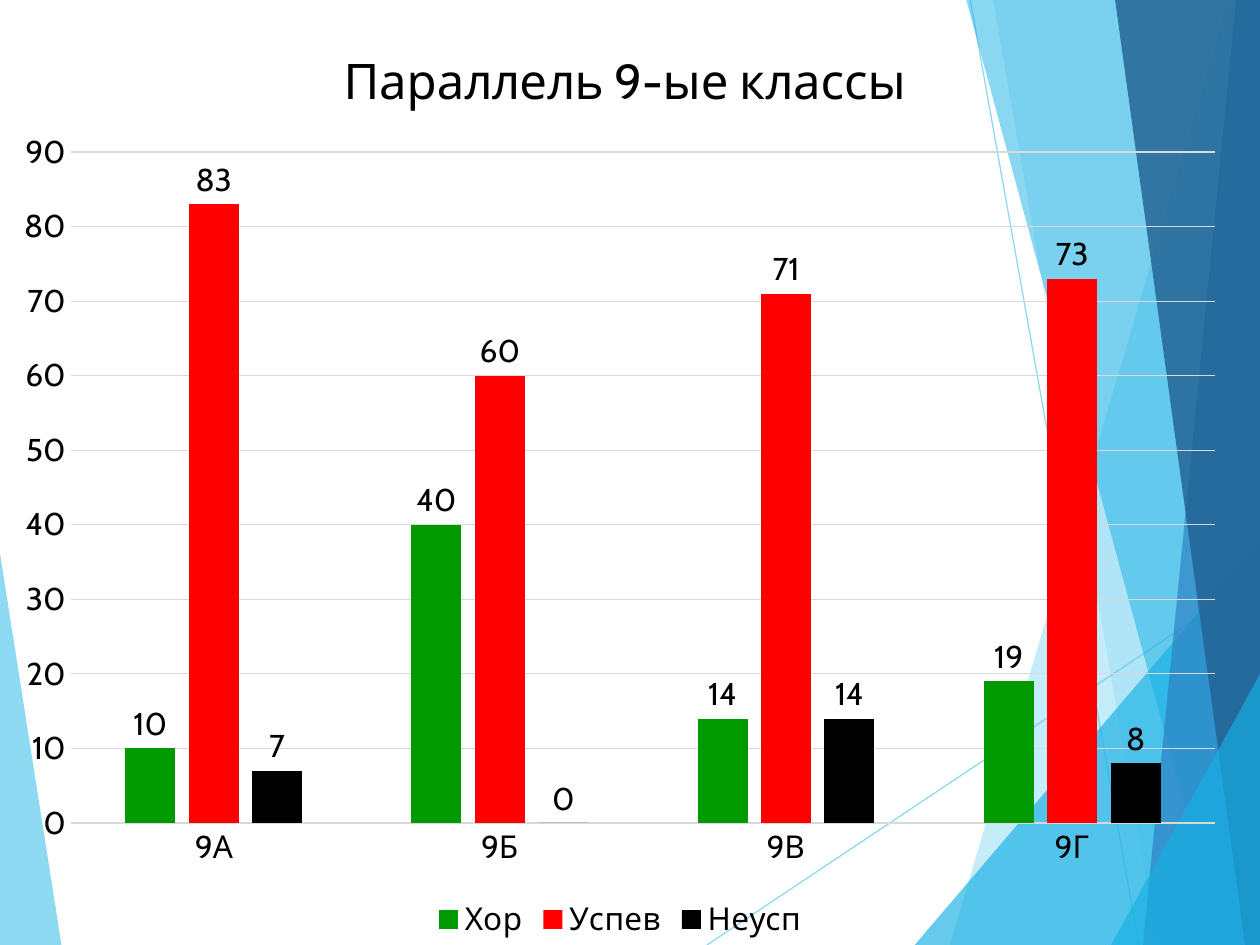
from lxml import etree
from pptx import Presentation
from pptx import util as u
from pptx.chart.data import CategoryChartData
from pptx.dml.color import RGBColor
from pptx.enum import chart as charts, shapes
from pptx.oxml import ns

FONT = "Cabin"
BLACK, GRID, SKY, CYAN = "000000", "D9D9D9", "5FCBEF", "17B0E4"
WIDTH, HEIGHT = 25.4, 19.05


def color(value):
    return RGBColor.from_string(value)


def paint(fill, value, alpha=100):
    """Solid fill with optional opacity in percent."""
    fill.solid()
    fill.fore_color.rgb = color(value)
    if alpha < 100:
        for node in fill._xPr.iter(ns.qn("a:srgbClr")):
            etree.SubElement(node, ns.qn("a:alpha"), val=str(alpha * 1000))


def style_font(font, size=18, fill=BLACK, bold=False):
    font.name, font.size, font.bold = FONT, u.Pt(size), bold
    font.color.rgb = color(fill)


def set_text(frame, content, **style):
    run = frame.paragraphs[0].add_run()
    run.text = content
    style_font(run.font, **style)


def add_polygon(slide, points, fill, alpha):
    corners = [(u.Cm(x), u.Cm(y)) for x, y in points]
    builder = slide.shapes.build_freeform(*corners[0])
    builder.add_line_segments(corners[1:], close=True)
    shape = builder.convert_to_shape()
    shape.shadow.inherit = False
    paint(shape.fill, fill, alpha)
    shape.line.fill.background()


def add_ray(slide, start, end):
    points = [u.Cm(value) for value in (*start, *end)]
    line = slide.shapes.add_connector(shapes.MSO_CONNECTOR.STRAIGHT, *points)
    line.line.width = u.Pt(0.75)
    paint(line.line.fill, SKY, 70)
    etree.SubElement(line._element.spPr, ns.qn("a:effectLst"))


def add_backdrop(slide, left, top, width, height):
    """Translucent facets along both sides of the box."""
    right, bottom = left + width, top + height

    # Left wedge and thin rays
    add_polygon(slide, [(left, top + 11.15), (left + 1.24, bottom),
                        (left, bottom)], SKY, 70)
    add_ray(slide, (left + 14.25, bottom), (right, top + 11.61))
    add_ray(slide, (left + 19.56, top), (left + 22.96, bottom))

    # Right facets: top x, top y, bottom x, colour, opacity
    facets = [
        (24.77, 0, 19.15, SKY, 36),
        (20.02, 0, 23.34, SKY, 20),
        (width, 10.9, 18.44, CYAN, 66),
        (19.48, 0, 24.64, CYAN, 50),
        (24.92, 0, 23.04, "2E83C3", 70),
        (22.48, 0, 25.1, "226292", 82),
        (width, 13.59, 22.4, CYAN, 66),
    ]
    for top_x, top_y, bottom_x, fill, alpha in facets:
        add_polygon(slide, [(left + top_x, top + top_y),
                            (left + bottom_x, bottom), (right, bottom),
                            (right, top + top_y)], fill, alpha)


def place(element, index, inner=False, **fractions):
    """Fix a chart part at fractions of the chart's size."""
    for old in element.findall(ns.qn("c:layout")):
        element.remove(old)
    layout = etree.Element(ns.qn("c:layout"))
    manual = etree.SubElement(layout, ns.qn("c:manualLayout"))
    settings = {"layoutTarget": "inner"} if inner else {}
    settings.update(xMode="edge", yMode="edge", **fractions)
    for name, value in settings.items():
        etree.SubElement(manual, ns.qn("c:" + name), val=str(value))
    element.insert(index, layout)


def add_results_chart(slide, left, top, width, height):
    series_data = [
        ("Хор", "009900", (10, 40, 14, 19)),
        ("Успев", "FF0000", (83, 60, 71, 73)),
        ("Неусп", BLACK, (7, 0, 14, 8)),
    ]
    data = CategoryChartData(number_format="0")
    data.categories = ["9А", "9Б", "9В", "9Г"]
    for name, _, values in series_data:
        data.add_series(name, values)
    box = [u.Cm(value) for value in (left, top, width, height)]
    chart = slide.shapes.add_chart(
        charts.XL_CHART_TYPE.COLUMN_CLUSTERED, *box, data).chart
    style_font(chart.font)

    # Title and legend
    set_text(chart.chart_title.text_frame, "Параллель 9-ые классы", size=28)
    chart.chart_title.include_in_layout = False
    place(chart.chart_title._element, 1, x=0.27, y=0.04)
    chart.has_legend = True
    chart.legend.position = charts.XL_LEGEND_POSITION.BOTTOM
    chart.legend.include_in_layout = False
    style_font(chart.legend.font)

    # Axes
    for axis in (chart.category_axis, chart.value_axis):
        axis.major_tick_mark = axis.minor_tick_mark = charts.XL_TICK_MARK.NONE
        style_font(axis.tick_labels.font)
    values_axis = chart.value_axis
    values_axis.minimum_scale, values_axis.maximum_scale = 0, 90
    values_axis.major_unit = 10
    values_axis.tick_labels.number_format = "0"
    values_axis.tick_labels.number_format_is_linked = False
    values_axis.format.line.fill.background()
    for line in (chart.category_axis.format.line,
                 values_axis.major_gridlines.format.line):
        line.width = u.Pt(0.75)
        paint(line.fill, GRID)

    # Columns and their labels
    plot = chart.plots[0]
    plot.gap_width, plot.overlap = 219, -27
    plot.vary_by_categories = False
    for series, (_, fill, _) in zip(plot.series, series_data):
        paint(series.format.fill, fill)
        series.invert_if_negative = False
        labels = series.data_labels
        labels.show_value = True
        labels.position = charts.XL_LABEL_POSITION.OUTSIDE_END
        labels.number_format, labels.number_format_is_linked = "0", False
        style_font(labels.font)
    plot_area = chart._chartSpace.chart.plotArea
    place(plot_area, 0, inner=True, x=0.057, y=0.161, w=0.923, h=0.71)


def main():
    presentation = Presentation()
    presentation.slide_width = u.Cm(WIDTH)
    presentation.slide_height = u.Cm(HEIGHT)
    slide = presentation.slides.add_slide(presentation.slide_layouts[6])
    add_backdrop(slide, 0, 0, WIDTH, HEIGHT)
    add_results_chart(slide, 0, 0, 25, HEIGHT)
    presentation.save("out.pptx")


if __name__ == "__main__":
    main()
